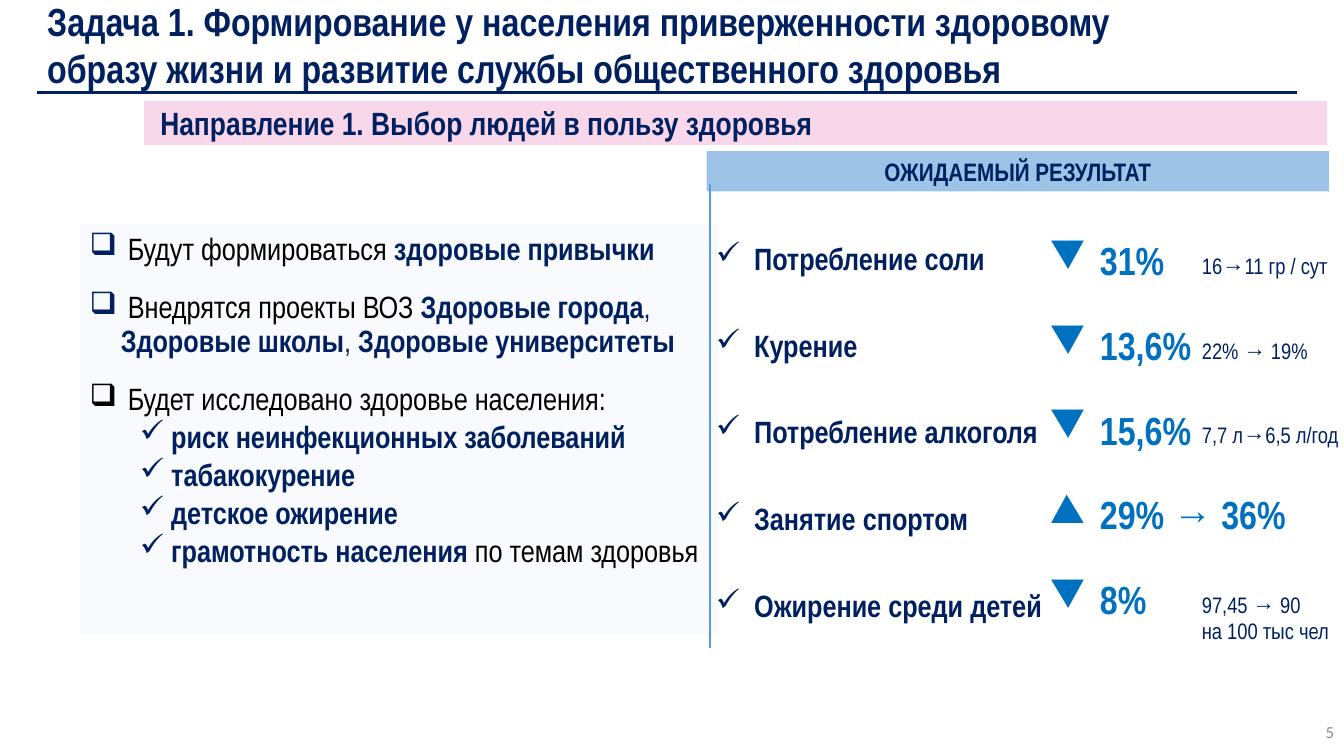
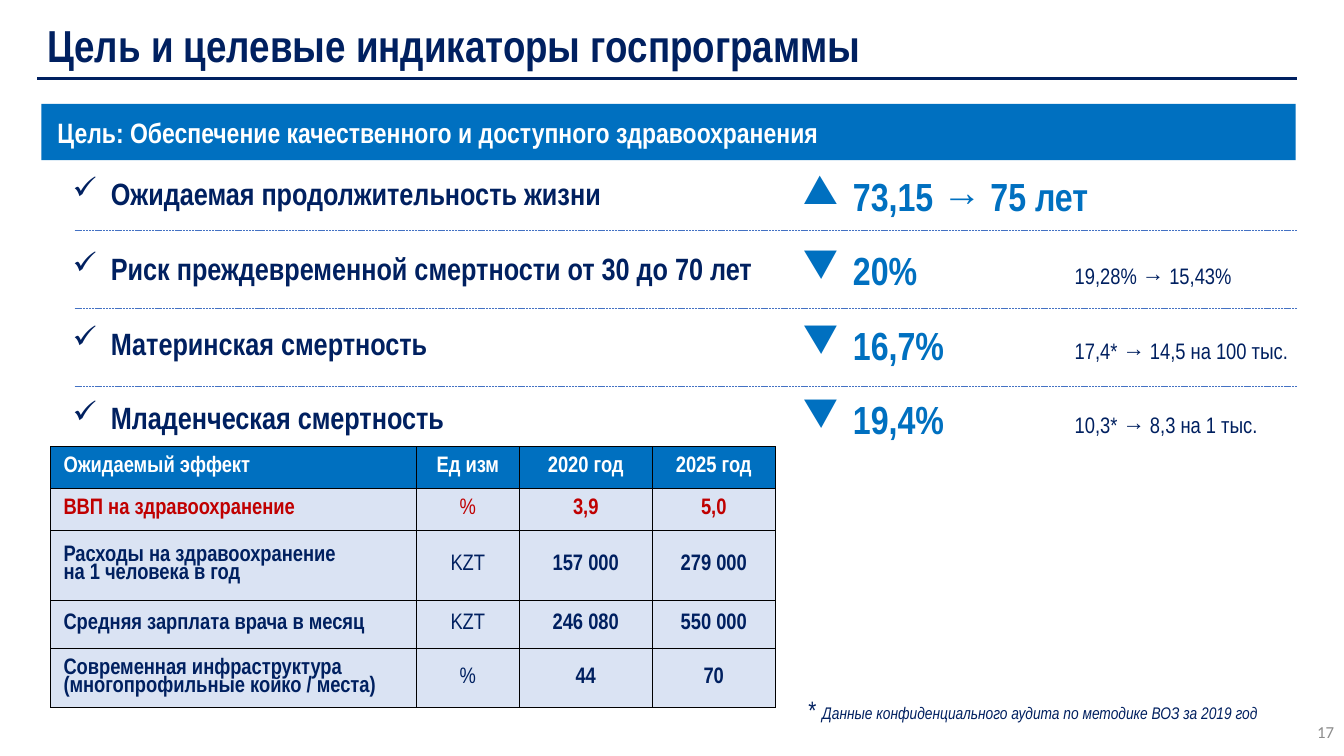
from lxml.etree import SubElement
from pptx import Presentation
from pptx.dml.color import RGBColor
from pptx.enum.dml import MSO_LINE
from pptx.enum.shapes import MSO_CONNECTOR, MSO_SHAPE
from pptx.enum.text import MSO_ANCHOR, PP_ALIGN
from pptx.oxml.ns import qn
from pptx.util import Inches, Pt

COLOURS = {
    "navy": "002060", "blue": "0070C0", "sky": "9DC3E6", "rule": "5B9BD5",
    "dash": "4472C4", "pink": "F9D7EA", "mist": "F9FAFD", "cell": "DAE3F3",
    "red": "C00000", "grey": "8C8C8C", "black": "000000", "white": "FFFFFF",
}
FONT = "Arial Narrow"


def colour(name):
    return RGBColor.from_string(COLOURS[name])


def panel(slide, box, fill=None, anchor=MSO_ANCHOR.MIDDLE, insets=(0.1, 0.05, 0.1, 0.05), wrap=True):
    left, top, width, height = [Inches(length) for length in box]
    if fill:
        shape = slide.shapes.add_shape(MSO_SHAPE.RECTANGLE, left, top, width, height)
        shape.shadow.inherit = False
        shape.fill.solid()
        shape.fill.fore_color.rgb = colour(fill)
        shape.line.fill.background()
    else:
        shape = slide.shapes.add_textbox(left, top, width, height)
    frame = shape.text_frame
    frame.word_wrap = wrap
    frame.vertical_anchor = anchor
    frame.margin_left, frame.margin_top, frame.margin_right, frame.margin_bottom = [
        Inches(inset) for inset in insets]
    return frame


def write(frame, text, size=22, color="navy", bold=False, italic=False, font=FONT,
          align=PP_ALIGN.LEFT, bullet=None, indent=0.0, hang=0.0, after=0, spacing=1.0):
    paragraph = frame.paragraphs[0]
    if paragraph.runs:
        paragraph = frame.add_paragraph()
    paragraph.alignment = align
    paragraph.space_after = Pt(after)
    paragraph.line_spacing = spacing
    if bullet:
        properties = paragraph._p.get_or_add_pPr()
        properties.set("marL", str(Inches(indent)))
        properties.set("indent", str(-Inches(hang)))
        SubElement(properties, qn("a:buChar")).set("char", bullet)
    for part in [(text, {})] if isinstance(text, str) else text:
        words, changes = part
        run = paragraph.add_run()
        run.text = words
        run.font.name = font
        run.font.size = Pt(changes.get("size", size))
        run.font.bold = changes.get("bold", bold)
        run.font.italic = changes.get("italic", italic)
        run.font.color.rgb = colour(changes.get("color", color))


presentation = Presentation()
presentation.slide_width = Inches(13.33)
presentation.slide_height = Inches(7.5)

headings = [
    ("Задача 1. Формирование у населения приверженности здоровому "
     "образу жизни и развитие службы общественного здоровья", 28, "5"),
    ("Цель и целевые индикаторы госпрограммы", 32, "17"),
]
slides = []
for title, size, number in headings:
    slide = presentation.slides.add_slide(presentation.slide_layouts[6])
    write(panel(slide, (0.37, 0.03, 11.34, 0.82)), title, size=size, bold=True)
    write(panel(slide, (12.74, 7.04, 0.59, 0.44)), number, size=12, color="grey",
          font="Calibri", align=PP_ALIGN.RIGHT)
    slides.append(slide)
task, goal = slides

band_insets = (0.16, 0.09, 0.16, 0.09)
write(panel(task, (1.43, 1, 11.73, 0.44), "pink", insets=band_insets),
      "Направление 1. Выбор людей в пользу здоровья", size=23, bold=True)
write(panel(goal, (0.41, 1.03, 12.44, 0.56), "blue", insets=band_insets),
      "Цель: Обеспечение качественного и доступного здравоохранения",
      size=20, color="white", bold=True)

plain = {"color": "black"}
strong = {"bold": True}
actions = panel(task, (0.79, 2.22, 6.33, 4.07), "mist", MSO_ANCHOR.TOP, (0.1, 0.1, 0.14, 0.16))
action_items = [
    ([(" ", strong), ("Будут формироваться ", plain), ("здоровые привычки", strong)], 18),
    ([(" ", strong), ("Внедрятся проекты ВОЗ ", plain), ("Здоровые города", strong), (", ", {}),
      ("Здоровые школы", strong), (", ", {}), ("Здоровые университеты", strong)], 18),
    ([(" Будет исследовано здоровье населения:", plain)], 3.3),
]
for parts, after in action_items:
    write(actions, parts, bullet="❑", indent=0.31, hang=0.31, after=after, spacing=0.9)
studies = [
    [("риск неинфекционных заболеваний", strong)],
    [("табакокурение", strong)],
    [("детское ожирение", strong)],
    [("грамотность населения ", strong), ("по темам здоровья", plain)],
]
for parts in studies:
    write(actions, parts, bullet="✓", indent=0.81, hang=0.31, after=3.3, spacing=0.9)

write(panel(task, (7.01, 1.5, 6.17, 0.4), "sky"), "ОЖИДАЕМЫЙ РЕЗУЛЬТАТ",
      size=18, bold=True, align=PP_ALIGN.CENTER)

results = [
    ("Потребление соли", "▼", "31%", "16→11 гр / сут"),
    ("Курение", "▼", "13,6%", "22% → 19%"),
    ("Потребление алкоголя", "▼", "15,6%", "7,7 л→6,5 л/год"),
    ("Занятие спортом", "▲", "29% → 36%", ""),
    ("Ожирение среди детей", "▼", "8%", "97,45 → 90\nна 100 тыс чел"),
]
indicators = [
    ("Ожидаемая продолжительность жизни", "▲", "73,15 → 75 лет", ""),
    ("Риск преждевременной смертности от 30 до 70 лет", "▼", "20%", "19,28% → 15,43%"),
    ("Материнская смертность", "▼", "16,7%", "17,4* → 14,5 на 100 тыс."),
    ("Младенческая смертность", "▼", "19,4%", "10,3* → 8,3 на 1 тыс."),
]
grids = [
    (task, results, 2.56, 0.86, 2.58, 0.84, (7.1, 10.41, 11.92)),
    (goal, indicators, 1.92, 0.74, 1.94, 0.74, (0.72, 7.96, 10.66)),
]
flush = (0, 0, 0, 0)
for slide, rows, label_start, label_step, value_start, value_step, lefts in grids:
    label_left, value_left, detail_left = lefts
    for index, (label, direction, value, detail) in enumerate(rows):
        label_middle = label_start + index * label_step
        value_middle = value_start + index * value_step
        write(panel(slide, (label_left, label_middle - 0.2, value_left - label_left, 0.4),
                    insets=flush, wrap=False),
              label, bold=True, bullet="✓", indent=0.38, hang=0.38)
        write(panel(slide, (value_left, value_middle - 0.25, 2.9, 0.5), insets=flush, wrap=False),
              value, size=28, color="blue", bold=True, bullet=direction, indent=0.5, hang=0.5)
        if detail:
            detail_frame = panel(slide, (detail_left, value_middle - 0.08, 13.33 - detail_left, 0.26),
                                 anchor=MSO_ANCHOR.TOP, insets=flush, wrap=False)
            for line in detail.split("\n"):
                write(detail_frame, line, size=16)

effects = [
    ("Ожидаемый эффект", "Ед изм", "2020 год", "2025 год"),
    ("ВВП на здравоохранение", "%", "3,9", "5,0"),
    ("Расходы на здравоохранение\nна 1 человека в год", "KZT", "157 000", "279 000"),
    ("Средняя зарплата врача в месяц", "KZT", "246 080", "550 000"),
    ("Cовременная инфраструктура (многопрофильные койко / места)", "%", "44", "70"),
]
column_widths = [3.63, 1.02, 1.32, 1.22]
row_heights = [0.41, 0.42, 0.7, 0.47, 0.55]
effect_table = goal.shapes.add_table(
    len(effects), len(column_widths), Inches(0.5), Inches(4.43),
    Inches(sum(column_widths)), Inches(sum(row_heights))).table
for column, width in zip(effect_table.columns, column_widths):
    column.width = Inches(width)
for row, height in zip(effect_table.rows, row_heights):
    row.height = Inches(height)
text_colours = ["white", "red", "navy", "navy", "navy"]
for row_index, entries in enumerate(effects):
    for column_index, entry in enumerate(entries):
        cell = effect_table.cell(row_index, column_index)
        cell.vertical_anchor = MSO_ANCHOR.MIDDLE
        cell.margin_left = cell.margin_right = Inches(0.13)
        cell.margin_top = cell.margin_bottom = Inches(0.07)
        for line in entry.split("\n"):
            write(cell.text_frame, line, size=16, color=text_colours[row_index],
                  bold=row_index == 0 or column_index != 1, spacing=0.85,
                  align=PP_ALIGN.CENTER if column_index else PP_ALIGN.LEFT)
        properties = cell._tc.get_or_add_tcPr()
        for side in ("a:lnL", "a:lnR", "a:lnT", "a:lnB"):
            border = SubElement(properties, qn(side), w=str(Pt(0.5)))
            SubElement(SubElement(border, qn("a:solidFill")), qn("a:srgbClr"), val=COLOURS["black"])
        cell.fill.solid()
        cell.fill.fore_color.rgb = colour("cell" if row_index else "blue")

write(panel(goal, (7.92, 6.84, 4.76, 0.4), wrap=False),
      [("* ", {"size": 18, "italic": False}),
       ("Данные конфиденциального аудита по методике ВОЗ за 2019 год", {})],
      size=12, italic=True)

rules = [
    (task, (0.37, 0.92, 12.86, 0.92), "navy", 2.25, None),
    (task, (7.04, 1.83, 7.04, 6.43), "rule", 1.5, None),
    (goal, (0.37, 0.78, 12.86, 0.78), "navy", 2.25, None),
]
for index in range(len(indicators) - 1):
    divider = 2.29 + index * 0.77
    rules.append((goal, (0.74, divider, 12.86, divider), "dash", 0.5, MSO_LINE.SQUARE_DOT))
for slide, ends, line_colour, weight, dash in rules:
    rule = slide.shapes.add_connector(MSO_CONNECTOR.STRAIGHT, *[Inches(end) for end in ends])
    rule.line.color.rgb = colour(line_colour)
    rule.line.width = Pt(weight)
    if dash:
        rule.line.dash_style = dash
    SubElement(rule._element.spPr, qn("a:effectLst"))

presentation.save("out.pptx")
